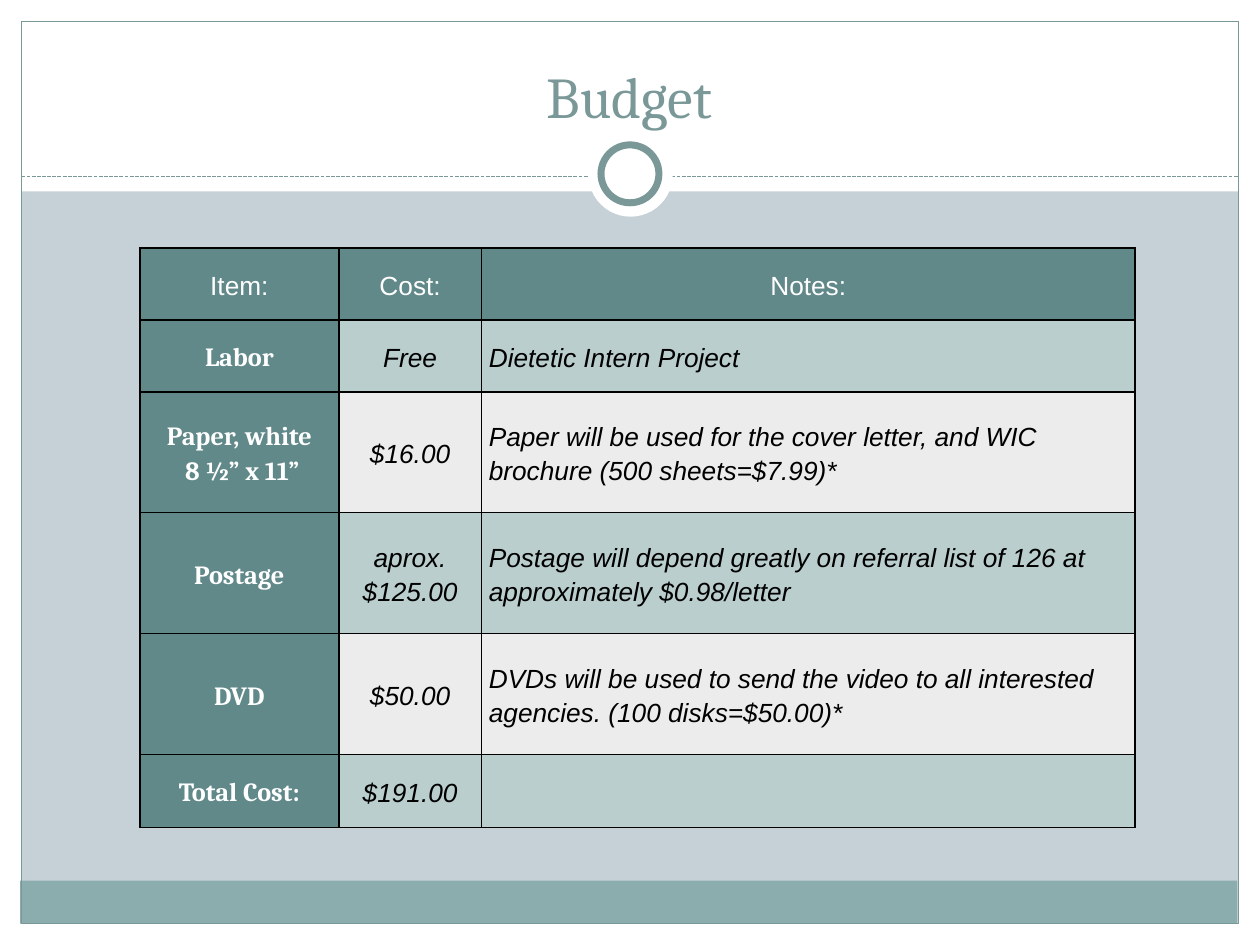
"""Build the Budget slide with its framed background and cost table."""
from dataclasses import dataclass

from lxml.etree import SubElement
from pptx import Presentation
from pptx.dml.color import RGBColor
from pptx.enum.dml import MSO_LINE
from pptx.enum.shapes import MSO_CONNECTOR, MSO_SHAPE
from pptx.enum.text import MSO_ANCHOR, PP_ALIGN
from pptx.oxml import parse_xml
from pptx.oxml.ns import nsdecls, qn
from pptx.util import Inches, Pt


@dataclass(frozen=True)
class Theme:
    white: RGBColor = RGBColor.from_string("FFFFFF")
    black: RGBColor = RGBColor.from_string("000000")
    backdrop: RGBColor = RGBColor.from_string("C5D1D7")
    accent: RGBColor = RGBColor.from_string("7B9899")
    footer: RGBColor = RGBColor.from_string("8CADAE")
    header: RGBColor = RGBColor.from_string("61898A")
    bands: tuple = (RGBColor.from_string("ECECEC"), RGBColor.from_string("BACECE"))
    heading_font: str = "Cambria"
    body_font: str = "Arial"
    title_size: Pt = Pt(33)
    table_size: Pt = Pt(15)


theme = Theme()


def add_panel(kind, box, fill=None, line_width=None):
    panel = slide.shapes.add_shape(kind, *map(Inches, box))
    panel.shadow.inherit = False
    if fill is None:
        panel.fill.background()
    else:
        panel.fill.solid()
        panel.fill.fore_color.rgb = fill
    if line_width is None:
        panel.line.fill.background()
    else:
        panel.line.color.rgb = theme.accent
        panel.line.width = Pt(line_width)


def style_text(paragraph, font_name, size, color, bold=False, italic=False):
    for run in paragraph.runs:
        run.font.name = font_name
        run.font.size = size
        run.font.color.rgb = color
        run.font.bold = bold
        run.font.italic = italic


prs = Presentation()
prs.slide_width, prs.slide_height = Inches(10), Inches(7.5)
slide = prs.slides.add_slide(prs.slide_layouts[6])
slide.background.fill.solid()
slide.background.fill.fore_color.rgb = theme.backdrop

for margin in [(0, 7.33, 10, 0.17), (0, 0, 10, 1.52), (0, 0, 0.17, 7.5), (9.83, 0, 0.17, 7.5)]:
    add_panel(MSO_SHAPE.RECTANGLE, margin, theme.white)
add_panel(MSO_SHAPE.RECTANGLE, (0.16, 6.99, 9.66, 0.34), theme.footer)
add_panel(MSO_SHAPE.RECTANGLE, (0.17, 0.17, 9.66, 7.16), line_width=0.75)

divider = slide.shapes.add_connector(
    MSO_CONNECTOR.STRAIGHT, Inches(0.17), Inches(1.4), Inches(9.83), Inches(1.4))
divider.line.color.rgb = theme.accent
divider.line.width = Pt(0.75)
divider.line.dash_style = MSO_LINE.SQUARE_DOT
divider.line._get_or_add_ln().find(qn("a:prstDash")).set("val", "sysDash")
SubElement(divider._element.spPr, qn("a:effectLst"))

add_panel(MSO_SHAPE.OVAL, (4.67, 1.05, 0.67, 0.67), theme.white)
add_panel(MSO_SHAPE.OVAL, (4.77, 1.15, 0.46, 0.46), theme.white, line_width=4)

columns = [1.58, 1.13, 5.19]
rows = [
    (0.57, "Item:", "Cost:", "Notes:"),
    (0.57, "Labor", "Free", "Dietetic Intern Project"),
    (0.96, "Paper, white\n 8 ½” x 11”", "$16.00",
     "Paper will be used for the cover letter, and WIC brochure (500 sheets=$7.99)*"),
    (0.96, "Postage", "aprox. $125.00",
     "Postage will depend greatly on referral list of 126 at approximately $0.98/letter"),
    (0.96, "DVD", "$50.00",
     "DVDs will be used to send the video to all interested agencies. (100 disks=$50.00)*"),
    (0.58, "Total Cost:", "$191.00", ""),
]
budget = slide.shapes.add_table(
    len(rows), len(columns), Inches(1.11), Inches(1.97), Inches(7.9), Inches(4.6)).table
for column, width in zip(budget.columns, columns):
    column.width = Inches(width)

for r, (height, *texts) in enumerate(rows):
    budget.rows[r].height = Inches(height)
    for c, text in enumerate(texts):
        cell = budget.cell(r, c)
        is_header, is_item = r == 0, c == 0
        on_dark = is_header or is_item
        cell.text_frame.text = text
        cell.vertical_anchor = MSO_ANCHOR.MIDDLE
        cell.margin_left = cell.margin_right = Inches(0.06)
        cell.margin_top = cell.margin_bottom = Inches(0.06)
        for paragraph in cell.text_frame.paragraphs:
            paragraph.line_spacing = 1.15
            paragraph.alignment = PP_ALIGN.LEFT if c == 2 and not is_header else PP_ALIGN.CENTER
            style_text(
                paragraph,
                theme.heading_font if is_item and not is_header else theme.body_font,
                theme.table_size,
                theme.white if on_dark else theme.black,
                bold=is_item and not is_header,
                italic=not on_dark)
        properties = cell._tc.get_or_add_tcPr()
        for side in ("lnL", "lnR", "lnT", "lnB"):
            properties.append(parse_xml(
                f'<a:{side} {nsdecls("a")} w="{Pt(1)}"><a:solidFill>'
                f'<a:srgbClr val="{theme.black}"/></a:solidFill></a:{side}>'))
        cell.fill.solid()
        cell.fill.fore_color.rgb = theme.header if on_dark else theme.bands[r % 2]

title = slide.shapes.add_textbox(Inches(0.33), Inches(0.25), Inches(9.33), Inches(0.83)).text_frame
title.word_wrap = True
title.vertical_anchor = MSO_ANCHOR.BOTTOM
title.margin_left = title.margin_right = Inches(0.05)
title.margin_top = title.margin_bottom = Inches(0.05)
title.text = "Budget"
title.paragraphs[0].alignment = PP_ALIGN.CENTER
style_text(title.paragraphs[0], theme.heading_font, theme.title_size, theme.accent)

prs.save("out.pptx")
